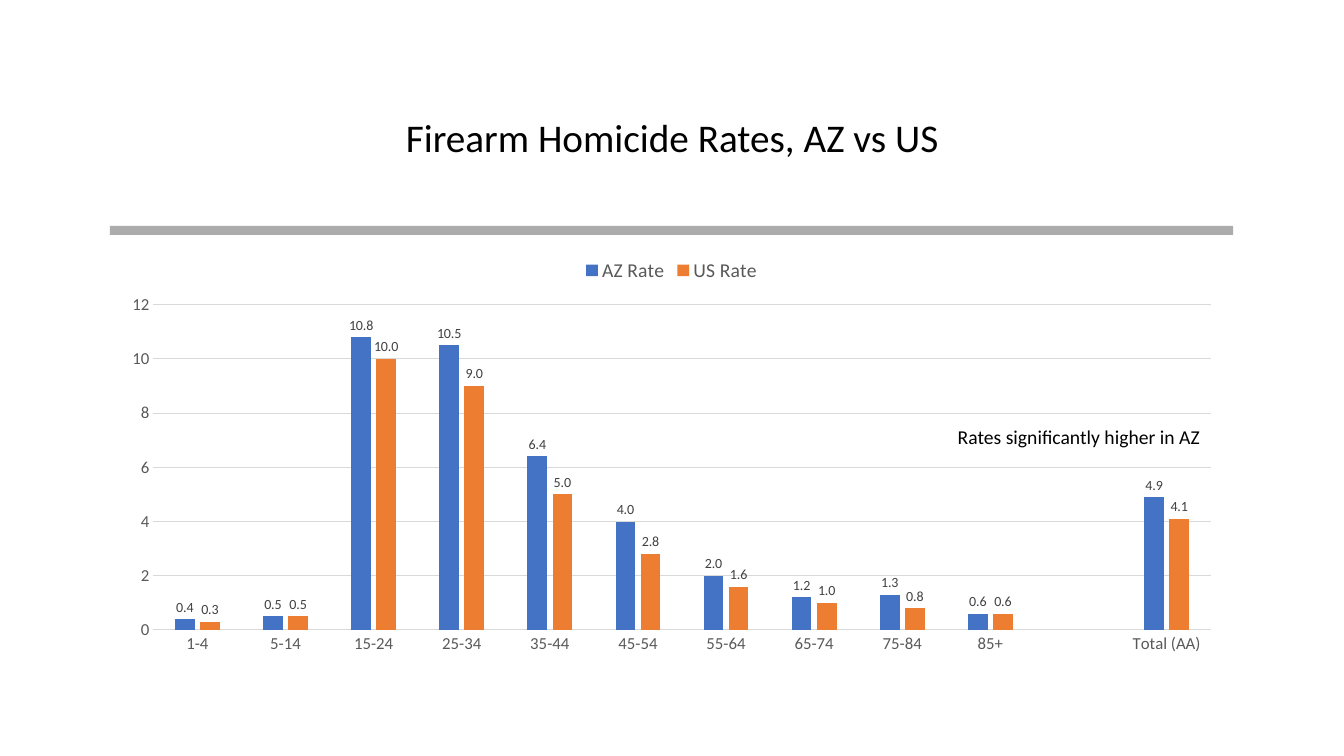
from lxml import etree
from pptx import Presentation
from pptx.chart.data import CategoryChartData
from pptx.dml.color import RGBColor
from pptx.enum import chart as ch, shapes, text
from pptx.oxml.ns import qn
from pptx.util import Inches, Pt

# Content
TITLE = "Firearm Homicide Rates, AZ vs US"
NOTE = "Rates significantly higher in AZ"
AGES = ["1-4", "5-14", "15-24", "25-34", "35-44", "45-54", "55-64",
        "65-74", "75-84", "85+", "", "Total (AA)"]
BLACK = RGBColor(0x00, 0x00, 0x00)
RULE = RGBColor(0x80, 0x80, 0x80)
GRID = RGBColor(0xD9, 0xD9, 0xD9)
AXIS_TEXT = RGBColor(0x59, 0x59, 0x59)
LABEL_TEXT = RGBColor(0x40, 0x40, 0x40)
BLUE = RGBColor(0x44, 0x72, 0xC4)
ORANGE = RGBColor(0xED, 0x7D, 0x31)
RATES = [
    ("AZ Rate", BLUE, [0.4, 0.5, 10.8, 10.5, 6.4, 4, 2, 1.2, 1.3, 0.6, None, 4.9]),
    ("US Rate", ORANGE, [0.3, 0.5, 10, 9, 5, 2.8, 1.6, 1, 0.8, 0.6, None, 4.1]),
]
FONT = "Calibri"
LEFT, WIDTH = Inches(1.09), Inches(11.14)  # shared by rule and chart


def style(font, size, color):
    font.name, font.size, font.bold = FONT, Pt(size), False
    font.color.rgb = color


def hairline(line):
    line.color.rgb = GRID
    line.width = Pt(0.75)


prs = Presentation()
prs.slide_width, prs.slide_height = Inches(13.33), Inches(7.5)
s = prs.slides.add_slide(prs.slide_layouts[5])

# Title
title = s.shapes.title
title.left, title.top = Inches(0.95), Inches(0.66)
title.width, title.height = Inches(11.43), Inches(1.45)
tf = title.text_frame
tf.text = TITLE
tf.vertical_anchor = text.MSO_ANCHOR.MIDDLE
p = tf.paragraphs[0]
p.alignment = text.PP_ALIGN.CENTER
p.line_spacing = 0.9
style(p.runs[0].font, 28, BLACK)

# Translucent rule under the title
rule = s.shapes.add_shape(shapes.MSO_SHAPE.RECTANGLE, LEFT, Inches(2.24), WIDTH, Inches(0.09))
rule.shadow.inherit = False
rule.fill.solid()
rule.fill.fore_color.rgb = RULE
rule.line.fill.background()
color = rule.fill._xPr.find(qn("a:solidFill"))[0]
etree.SubElement(color, qn("a:alpha"), val="65000")

# Chart
data = CategoryChartData()
data.categories = AGES
for name, _, values in RATES:
    data.add_series(name, values)
chart = s.shapes.add_chart(ch.XL_CHART_TYPE.COLUMN_CLUSTERED, LEFT, Inches(2.45),
                           WIDTH, Inches(4.12), data).chart
style(chart.font, 10, BLACK)
chart.has_title = False
chart.has_legend = True
chart.legend.position = ch.XL_LEGEND_POSITION.TOP
chart.legend.include_in_layout = False
style(chart.legend.font, 14, AXIS_TEXT)

# Axes
ages, rates = chart.category_axis, chart.value_axis
for axis in (ages, rates):
    axis.major_tick_mark = axis.minor_tick_mark = ch.XL_TICK_MARK.NONE
    style(axis.tick_labels.font, 12, AXIS_TEXT)
hairline(ages.format.line)
rates.format.line.fill.background()
rates.minimum_scale, rates.maximum_scale, rates.major_unit = 0, 12, 2
rates.has_major_gridlines = True
hairline(rates.major_gridlines.format.line)

# Columns and their labels
plot = chart.plots[0]
plot.gap_width, plot.overlap = 219, -27
plot.vary_by_categories = False
for series, (_, fill, _) in zip(plot.series, RATES):
    series.format.fill.solid()
    series.format.fill.fore_color.rgb = fill
    series.invert_if_negative = False
    labels = series.data_labels
    labels.show_value = True
    labels.position = ch.XL_LABEL_POSITION.OUTSIDE_END
    labels.number_format, labels.number_format_is_linked = "#,##0.0", False
    style(labels.font, 10, LABEL_TEXT)

# Note over the chart
note = s.shapes.add_textbox(Inches(9.4), Inches(4.17), Inches(2.63), Inches(0.34))
tf = note.text_frame
tf.text = NOTE
tf.word_wrap = False
tf.auto_size = text.MSO_AUTO_SIZE.SHAPE_TO_FIT_TEXT
style(tf.paragraphs[0].runs[0].font, 14, BLACK)

prs.save("out.pptx")
